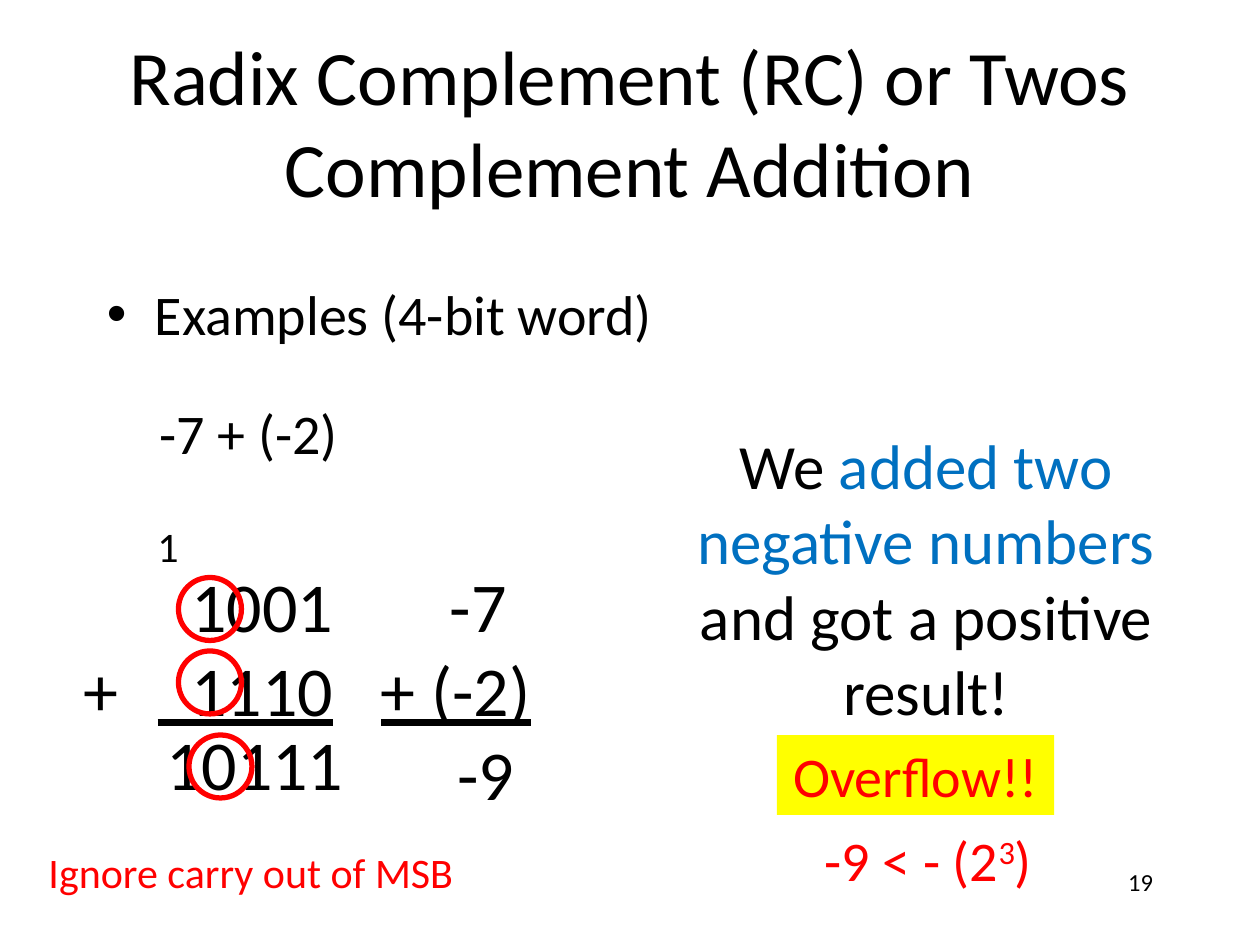
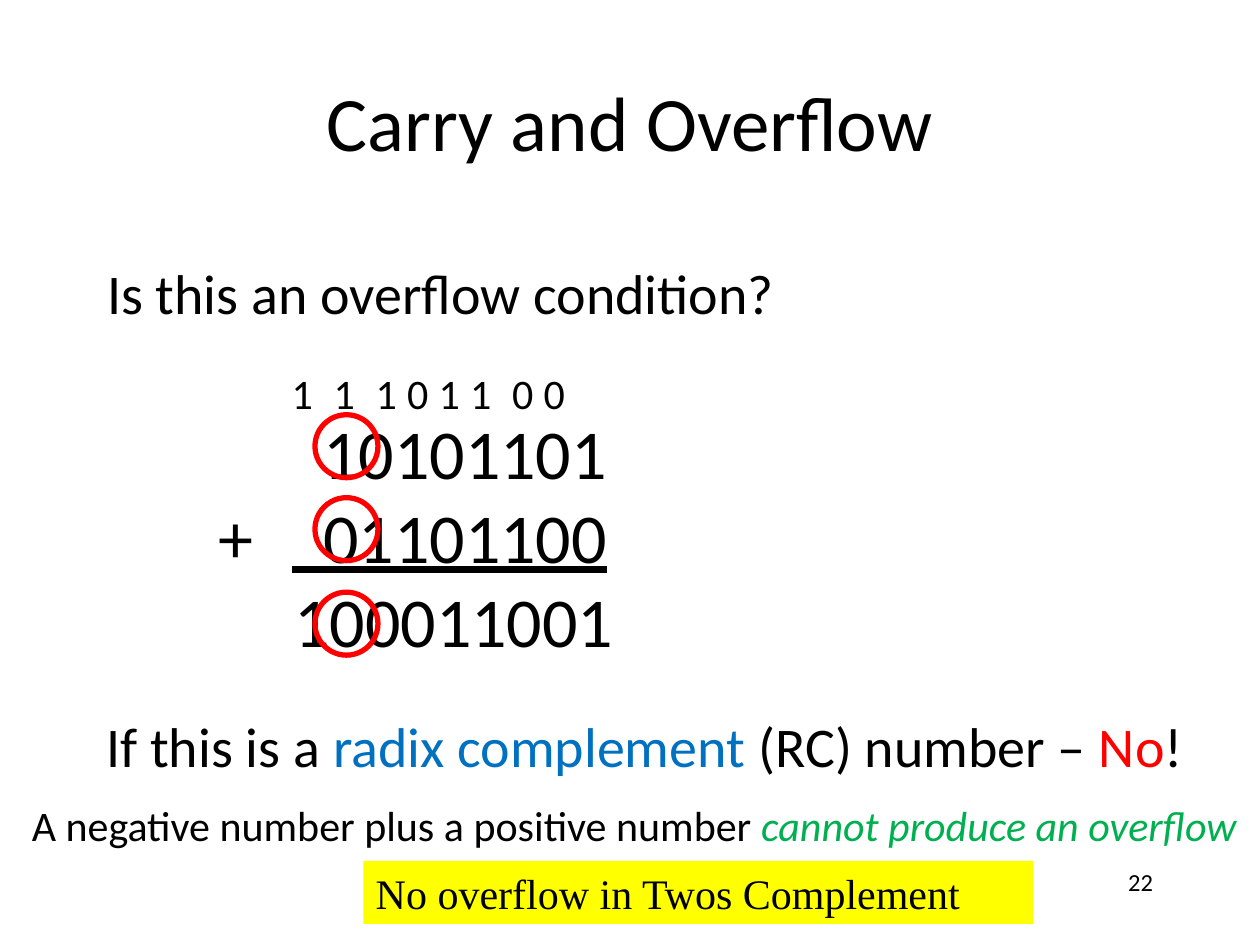
from dataclasses import dataclass
from itertools import accumulate

from lxml import etree
from pptx import Presentation
from pptx.dml.color import RGBColor
from pptx.enum.shapes import MSO_CONNECTOR, MSO_SHAPE
from pptx.enum.text import MSO_ANCHOR, MSO_AUTO_SIZE, PP_ALIGN
from pptx.oxml.ns import qn
from pptx.util import Inches, Pt

LEFT, CENTER, RIGHT = PP_ALIGN.LEFT, PP_ALIGN.CENTER, PP_ALIGN.RIGHT
TOP, MIDDLE = MSO_ANCHOR.TOP, MSO_ANCHOR.MIDDLE
STRAIGHT = MSO_CONNECTOR.STRAIGHT
ELLIPSE, RECTANGLE = MSO_SHAPE.OVAL, MSO_SHAPE.RECTANGLE
TITLE_ONLY = 5
COLUMNS, ROWS = 120, 90
CELL = Inches(10) // COLUMNS


@dataclass(frozen=True)
class Theme:
    ink: RGBColor = RGBColor(0x00, 0x00, 0x00)
    red: RGBColor = RGBColor(0xFF, 0x00, 0x00)
    blue: RGBColor = RGBColor(0x00, 0x70, 0xC0)
    green: RGBColor = RGBColor(0x00, 0xB0, 0x50)
    yellow: RGBColor = RGBColor(0xFF, 0xFF, 0x00)
    sans: str = "Calibri"
    serif: str = "Times New Roman"
    title: int = 44
    digits: int = 40
    message: int = 36
    body: int = 32
    small: int = 24
    number: int = 14
    ring: int = 3
    rule: int = 4


THEME = Theme()


@dataclass(frozen=True)
class Box:
    """A rectangle in grid cells."""
    left: float
    top: float
    width: float
    height: float

    def inside(self, dx, dy, width, height):
        return Box(self.left + dx, self.top + dy, width, height)

    def emu(self):
        return [round(n * CELL) for n in (self.left, self.top, self.width, self.height)]


def add_run(paragraph, text, size, color=THEME.ink, font=THEME.sans, italic=None, raised=False):
    run = paragraph.add_run()
    run.text = text
    run.font.size = Pt(size)
    run.font.name = font
    run.font.color.rgb = color
    run.font.italic = italic
    if raised:
        run.font._element.set("baseline", "30000")


def write(frame, lines, size, align=LEFT, anchor=TOP, **style):
    """Fill a frame; each line is a string or a list of (text, run style) pairs."""
    frame.word_wrap = True
    frame.auto_size = MSO_AUTO_SIZE.NONE
    frame.vertical_anchor = anchor
    for index, line in enumerate(lines):
        paragraph = frame.add_paragraph() if index else frame.paragraphs[0]
        paragraph.alignment = align
        for text, extra in [(line, {})] if isinstance(line, str) else line:
            add_run(paragraph, text, size, **{**style, **extra})
    return frame


def add_text(slide, box, lines, size, **style):
    return write(slide.shapes.add_textbox(*box.emu()).text_frame, lines, size, **style)


def indent(paragraph, margin, first=0):
    properties = paragraph._p.get_or_add_pPr()
    properties.set("marL", str(Inches(margin)))
    properties.set("indent", str(Inches(first)))
    return properties


def add_bullet(paragraph):
    properties = indent(paragraph, 0.38, -0.38)
    etree.SubElement(properties, qn("a:buFont")).set("typeface", "Arial")
    etree.SubElement(properties, qn("a:buChar")).set("char", "•")


def add_rule(slide, left, right, row):
    rule = slide.shapes.add_connector(
        STRAIGHT, *(round(n * CELL) for n in (left, row, right, row)))
    rule.line.color.rgb = THEME.ink
    rule.line.width = Pt(THEME.rule)
    etree.SubElement(rule._element.spPr, qn("a:effectLst"))


def add_ring(slide, box):
    ring = slide.shapes.add_shape(ELLIPSE, *box.emu())
    ring.shadow.inherit = False
    ring.fill.background()
    ring.line.color.rgb = THEME.red
    ring.line.width = Pt(THEME.ring)


def add_highlight(slide, box, text, size, **style):
    band = slide.shapes.add_shape(RECTANGLE, *box.emu())
    band.shadow.inherit = False
    band.fill.solid()
    band.fill.fore_color.rgb = THEME.yellow
    band.line.fill.background()
    write(band.text_frame, [text], size, **style)


def add_titled_slide(deck, title, number):
    slide = deck.slides.add_slide(deck.slide_layouts[TITLE_ONLY])
    heading = slide.shapes.title
    heading.left, heading.top, heading.width, heading.height = Box(9, 4, 102, 15).emu()
    write(heading.text_frame, [title], THEME.title, align=CENTER, anchor=MIDDLE)
    add_text(slide, Box(86, 82, 25, 6), [number], THEME.number, align=RIGHT)
    return slide


def add_binary_sum(slide, box, carries, carry_steps, addends, result, result_shift, sign_bits):
    """Column addition whose addends fill the box, with the sign bits ringed."""
    add_text(slide, box, addends, THEME.digits, align=RIGHT)
    add_text(slide, box.inside(-7, 8, 7, 9), ["+"], THEME.digits)
    add_rule(slide, box.left + 1.2, box.left + box.width - 1.2, box.top + 15.8)
    shift, row = result_shift
    add_text(slide, box.inside(shift - 5, row, box.width + 5, 9), [result],
             THEME.digits, align=RIGHT)
    for carry, column in zip(carries, accumulate(carry_steps, initial=0)):
        add_text(slide, box.inside(column, -4, 5, 6), [carry], THEME.small)
    for column, row in sign_bits:
        add_ring(slide, box.inside(column, row, 6, 6))


def add_decimal_sum(slide, box):
    frame = add_text(slide, box, ["-7", "+ (-2)", "-9"], THEME.digits, align=CENTER)
    indent(frame.paragraphs[0], 0.36)
    indent(frame.paragraphs[2], 0.48)
    add_rule(slide, box.left + 1.9, box.left + box.width - 1.8, box.top + 15.8)


def add_overflow_verdict(slide, box):
    add_text(slide, box.inside(0, 0, box.width, 30), [[
        ("We ", {}),
        ("added two negative numbers ", {"color": THEME.blue}),
        ("and got a positive result!", {}),
    ]], THEME.message, align=CENTER)
    add_highlight(slide, box.inside(13, 30, 26.4, 7.6), "Overflow!!", THEME.body,
                  align=CENTER, color=THEME.red)
    add_text(slide, box.inside(15.4, 38, 24, 7.6),
             [[("-9 < - (2", {}), ("3", {"raised": True}), (")", {})]],
             THEME.body, align=CENTER, color=THEME.red)


def build_addition_slide(deck):
    slide = add_titled_slide(deck, "Radix Complement (RC) or Twos Complement Addition", "19")
    examples = add_text(slide, Box(9, 26, 102, 8), ["Examples (4-bit word)"], THEME.body)
    add_bullet(examples.paragraphs[0])
    add_text(slide, Box(12.7, 37.4, 22, 7.6), ["-7 + (-2)"], THEME.body, align=CENTER)
    add_binary_sum(slide, Box(13.8, 53, 19.1, 18), "1", [], ["1001", "1110"], "10111",
                   (1, 15), [(3.2, 2), (3.2, 9), (4.2, 17)])
    add_decimal_sum(slide, Box(34.4, 53, 18, 25))
    add_overflow_verdict(slide, Box(61, 40, 54.4, 46))
    add_text(slide, Box(2.9, 80, 42, 6), ["Ignore carry out of MSB"], THEME.small,
             align=CENTER, color=THEME.red)


def build_carry_slide(deck):
    slide = add_titled_slide(deck, "Carry and Overflow", "22")
    add_text(slide, Box(8, 24, 68, 7.6), ["Is this an overflow condition?"], THEME.body,
             align=CENTER)
    add_binary_sum(slide, Box(26.6, 38.4, 32.4, 18), "11101100", [4, 4, 3, 3, 3, 4, 3],
                   ["10101101", "01101100"], "100011001",
                   (0.6, 16), [(3.4, 1.1), (3.4, 9), (3.4, 18)])
    add_text(slide, Box(7.4, 67.2, 108, 7.6), [[
        ("If this is a ", {}),
        ("radix complement ", {"color": THEME.blue}),
        ("(RC) number – ", {}),
        ("No", {"color": THEME.red}),
        ("!", {}),
    ]], THEME.body, align=CENTER)
    add_text(slide, Box(1, 75.6, 118.8, 6), [[
        ("A negative number plus a positive number ", {}),
        ("cannot produce an overflow", {"color": THEME.green, "italic": True}),
    ]], THEME.small, align=CENTER)
    add_highlight(slide, Box(34.6, 82, 63.8, 6), "No overflow in Twos Complement",
                  THEME.small, font=THEME.serif)


def main():
    deck = Presentation()
    deck.slide_width, deck.slide_height = COLUMNS * CELL, ROWS * CELL
    build_addition_slide(deck)
    build_carry_slide(deck)
    deck.save("out.pptx")


if __name__ == "__main__":
    main()
